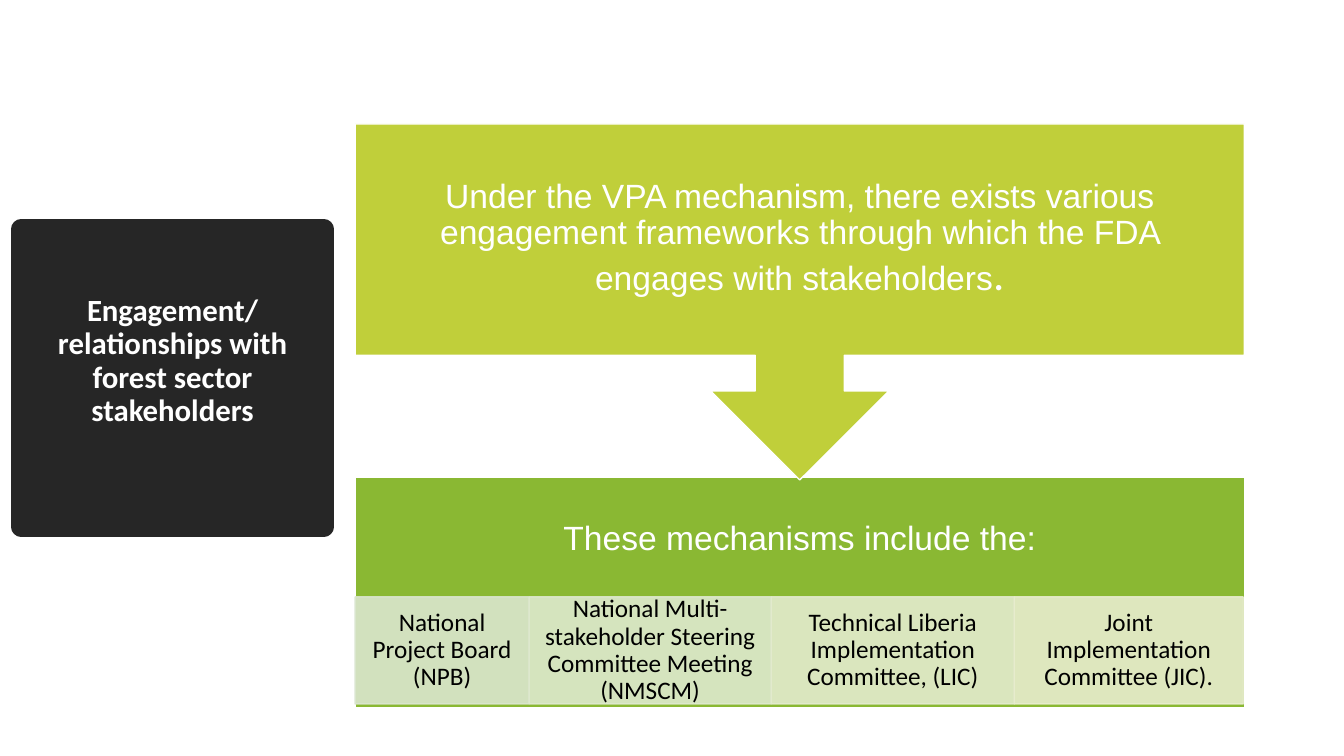
from itertools import pairwise
from lxml.etree import SubElement as Sub
from pptx import Presentation
from pptx.dml.color import RGBColor as Rgb
from pptx.enum.shapes import MSO_SHAPE as Kind
from pptx.enum.text import MSO_ANCHOR as Anchor, MSO_AUTO_SIZE as Auto, PP_ALIGN as Align
from pptx.oxml.ns import qn
from pptx.util import Emu, Inches, Pt

SCALE = 914400 / 100.8
LEFT, WIDTH = 355, 889
WHITE, BLACK = "FFFFFF", "000000"
HEAD = dict(name="Arial", size=Pt(24))
CELL = dict(name="Calibri", size=Pt(18))

# Cell edges, then the fill and wording of each cell
EDGES = [355, 529, 771, 1014, 1243]
BODIES = [
    ("DAE6CE", "National Project Board (NPB)"),
    ("DEE9CE", "National Multi-stakeholder Steering Committee Meeting (NMSCM)"),
    ("E3EBCE", "Technical Liberia Implementation Committee, (LIC)"),
    ("E8EDCE", "Joint Implementation Committee (JIC)."),
]


def px(num):
    return Emu(round(num * SCALE))


def color(part, code):
    part.rgb = Rgb.from_string(code)


def paint(shape, fill, line, width=1, alpha=None):
    shape.fill.solid()
    color(shape.fill.fore_color, fill)
    shape.line.fill.solid()
    color(shape.line.fill.fore_color, line)
    shape.line.width = Pt(width)
    if alpha:
        for tone in shape._element.spPr.iter(qn("a:srgbClr")):
            Sub(tone, qn("a:alpha"), val=str(alpha * 1000))


def block(slide, kind, place, fill, line, alpha=None):
    shape = slide.shapes.add_shape(kind, *map(px, place))
    shape.shadow.inherit = False
    paint(shape, fill, line, alpha=alpha)
    return shape


def write(shape, runs, ink, pads):
    """Fill a shape with one centred paragraph of (text, font) runs."""
    frame = shape.text_frame
    frame.word_wrap = True
    frame.auto_size = Auto.NONE
    frame.vertical_anchor = Anchor.MIDDLE
    for side, pad in zip(("left", "top", "right", "bottom"), pads):
        setattr(frame, f"margin_{side}", px(pad))
    para = frame.paragraphs[0]
    para.alignment = Align.CENTER
    para.line_spacing = 0.9
    for text, style in runs:
        run = para.add_run()
        run.text = text
        for key, val in style.items():
            setattr(run.font, key, val)
        color(run.font.color, ink)


def label(slide, place, runs):
    box = slide.shapes.add_textbox(*map(px, place))
    write(box, runs, WHITE, [19] * 4)


def heading(slide):
    title = slide.shapes.title
    title.left, title.top, title.width, title.height = map(px, (21, 229, 303, 298))
    paint(title, "262626", "262626", 13.75)
    Sub(title.line._get_or_add_ln(), qn("a:round"))
    style = dict(name="Calibri", size=Pt(22), bold=True)
    text = "Engagement/ relationships with forest sector stakeholders"
    write(title, [(text, style)], WHITE, (10, 5, 10, 38))


def main():
    deck = Presentation()
    deck.slide_width, deck.slide_height = Inches(13.33), Inches(7.5)
    slide = deck.slides.add_slide(deck.slide_layouts[5])
    heading(slide)

    # Lower panel with its row of bodies
    block(slide, Kind.RECTANGLE, (LEFT, 477, WIDTH, 231), "8AB833", WHITE)
    label(slide, (LEFT, 477, WIDTH, 125), [("These mechanisms include the:", HEAD)])
    for (start, end), (fill, text) in zip(pairwise(EDGES), BODIES):
        cell = block(slide, Kind.RECTANGLE, (start, 597, end - start, 107), fill, fill, 90)
        write(cell, [(text, CELL)], BLACK, (14, 3, 14, 3))

    # Upper callout, turned to point down at the panel
    arrow = block(slide, Kind.UP_ARROW_CALLOUT, (LEFT, 124, WIDTH, 356), "C0CF3A", WHITE)
    arrow.rotation = 180
    text = ("Under the VPA mechanism, there exists various engagement frameworks "
            "through which the FDA engages with stakeholders")
    stop = dict(name="Calibri", size=Pt(32))
    label(slide, (LEFT, 124, WIDTH, 231), [(text, HEAD), (".", stop)])

    deck.save("out.pptx")


if __name__ == "__main__":
    main()
